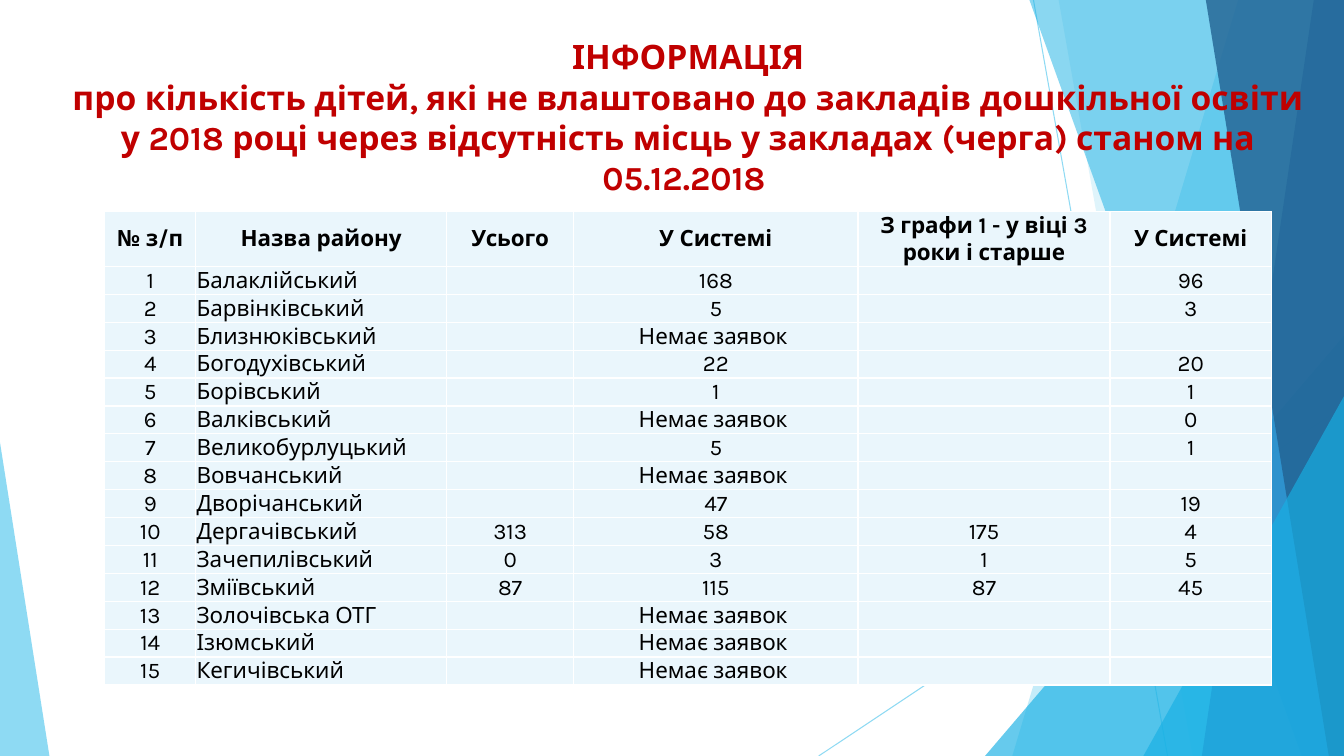
from lxml import etree
from pptx import Presentation
from pptx import util as u
from pptx.dml.color import RGBColor
from pptx.enum import shapes, text
from pptx.oxml.ns import qn

WIDTH, HEIGHT = 13.33, 7.5


def color(value):
    return RGBColor.from_string(value)


def apply(target, values):
    for name, value in values.items():
        setattr(target, name, value)


class SlideBuilder:
    font = {"name": "Karla", "size": u.Pt(16), "bold": False}
    cell_format = {
        "margin_left": u.Inches(0.01), "margin_right": u.Inches(0.01),
        "margin_top": u.Inches(0.01), "margin_bottom": 0,
        "vertical_anchor": text.MSO_ANCHOR.MIDDLE,
    }
    cell_fill, cell_border = "EAF6FC", "FFFFFF"

    def __init__(self, slide):
        self.slide = slide

    def set_alpha(self, shape, percent):
        for node in shape._element.spPr.iter(qn("a:srgbClr")):
            etree.SubElement(node, qn("a:alpha"), val=str(percent * 1000))

    def paint(self, shape, fill, alpha):
        shape.shadow.inherit = False
        shape.fill.solid()
        shape.fill.fore_color.rgb = color(fill)
        shape.line.fill.background()
        self.set_alpha(shape, alpha)

    def line(self, start, end, stroke, alpha):
        points = [u.Inches(value) for value in (*start, *end)]
        connector = self.slide.shapes.add_connector(
            shapes.MSO_CONNECTOR.STRAIGHT, *points)
        connector.line.color.rgb = color(stroke)
        connector.line.width = u.Pt(0.75)
        self.set_alpha(connector, alpha)
        etree.SubElement(connector._element.spPr, qn("a:effectLst"))

    def band(self, top_x, bottom_x, fill, alpha):
        """Full-height panel with a slanted left edge."""
        corners = [(top_x, 0), (WIDTH, 0), (WIDTH, HEIGHT), (bottom_x, HEIGHT)]
        points = [(u.Inches(x), u.Inches(y)) for x, y in corners]
        builder = self.slide.shapes.build_freeform(*points[0])
        builder.add_line_segments(points[1:], close=True)
        self.paint(builder.convert_to_shape(), fill, alpha)

    def corner(self, left, top, width, apex, fill, alpha):
        """Triangle standing on the bottom edge of the slide."""
        box = [u.Inches(value) for value in (left, top, width, HEIGHT - top)]
        triangle = self.slide.shapes.add_shape(
            shapes.MSO_SHAPE.ISOSCELES_TRIANGLE, *box)
        triangle.adjustments[0] = apex
        self.paint(triangle, fill, alpha)

    def title(self, box, content, fill):
        frame = self.slide.shapes.add_textbox(
            *[u.Inches(value) for value in box]).text_frame
        apply(frame, {"word_wrap": True, "vertical_anchor": text.MSO_ANCHOR.TOP})
        paragraph = frame.paragraphs[0]
        paragraph.text = content
        paragraph.alignment = text.PP_ALIGN.CENTER
        for run in paragraph.runs:
            apply(run.font, {**self.font, "size": u.Pt(24), "bold": True})
            run.font.color.rgb = color(fill)

    def border(self, cell):
        properties = cell._tc.get_or_add_tcPr()
        for index, side in enumerate(("lnL", "lnR", "lnT", "lnB")):
            edge = etree.Element(qn("a:" + side), w=str(u.Pt(1)))
            fill = etree.SubElement(edge, qn("a:solidFill"))
            etree.SubElement(fill, qn("a:srgbClr"), val=self.cell_border)
            properties.insert(index, edge)

    def cell(self, cell, content, bold, alignment):
        apply(cell, self.cell_format)
        cell.fill.solid()
        cell.fill.fore_color.rgb = color(self.cell_fill)
        self.border(cell)
        paragraph = cell.text_frame.paragraphs[0]
        paragraph.alignment = alignment
        if content:
            run = paragraph.add_run()
            run.text = content
            apply(run.font, {**self.font, "bold": bold})
            run.font.color.rgb = color("000000")
        else:
            # Keeps empty cells from stretching the row
            etree.SubElement(paragraph._p, qn("a:endParaRPr"), sz="1600")

    def table(self, left, top, widths, heights, rows):
        table = self.slide.shapes.add_table(
            len(rows), len(widths), u.Inches(left), u.Inches(top),
            u.Inches(sum(widths)), u.Inches(sum(heights))).table
        apply(table, {"first_row": False, "horz_banding": False})
        for column, width in zip(table.columns, widths):
            column.width = u.Inches(width)
        for i, (row, height) in enumerate(zip(rows, heights)):
            table.rows[i].height = u.Inches(height)
            for j, content in enumerate(row):
                is_name = i > 0 and j == 1
                alignment = text.PP_ALIGN.LEFT if is_name else text.PP_ALIGN.CENTER
                self.cell(table.cell(i, j), content, i == 0, alignment)


NONE = "Немає заявок "
HEADER = ["№ з/п", "Назва району", "Усього", "У Системі",
          "З графи 1 - у віці 3 роки і старше", "У Системі"]
# District, total, in the system, aged 3 and over, in the system
DISTRICTS = [
    ("Балаклійський", "", "168", "", "96"),
    ("Барвінківський", "", "5", "", "3"),
    ("Близнюківський", "", NONE, "", ""),
    ("Богодухівський", "", "22", "", "20"),
    ("Борівський", "", "1", "", "1"),
    ("Валківський", "", NONE, "", "0"),
    ("Великобурлуцький", "", "5", "", "1"),
    ("Вовчанський", "", NONE, "", ""),
    ("Дворічанський", "", "47", "", "19"),
    ("Дергачівський", "313", "58", "175", "4"),
    ("Зачепилівський", "0", "3", "1", "5"),
    ("Зміївський", "87", "115", "87", "45"),
    ("Золочівська ОТГ", "", NONE, "", ""),
    ("Ізюмський", "", NONE, "", ""),
    ("Кегичівський", "", NONE, "", ""),
]


def main():
    presentation = Presentation()
    apply(presentation, {"slide_width": u.Inches(WIDTH),
                         "slide_height": u.Inches(HEIGHT)})
    builder = SlideBuilder(
        presentation.slides.add_slide(presentation.slide_layouts[6]))

    # Background facets, back to front
    builder.line((10.25, 0), (11.58, HEIGHT), "5FCBEF", 70)
    builder.line((WIDTH, 4.03), (8.12, HEIGHT), "5FCBEF", 70)
    builder.band(12.28, 10.04, "5FCBEF", 36)
    builder.band(10.5, 11.83, "5FCBEF", 20)
    builder.corner(9.77, 3.33, 3.56, 1, "17B0E4", 66)
    builder.band(10.21, 12.91, "17B0E4", 50)
    builder.band(13.03, 11.92, "2E83C3", 70)
    builder.band(11.96, 13.18, "226292", 80)
    builder.corner(11.34, 3.93, 1.99, 1, "17B0E4", 66)
    builder.corner(0, 4.39, 0.49, 0, "5FCBEF", 70)

    # Title
    builder.title(
        (0.62, 0.31, 12.41, 1.44),
        "ІНФОРМАЦІЯ\vпро кількість дітей, які не влаштовано до закладів "
        "дошкільної освіти у 2018 році через відсутність місць у закладах "
        "(черга) станом на 05.12.2018 ", "C00000")

    # District table
    rows = [HEADER] + [(str(number), *district)
                       for number, district in enumerate(DISTRICTS, 1)]
    builder.table(1.04, 2.1, [0.9, 2.49, 1.26, 2.82, 2.5, 1.6],
                  [0.53] + [0.27] * len(DISTRICTS), rows)

    presentation.save("out.pptx")


if __name__ == "__main__":
    main()
